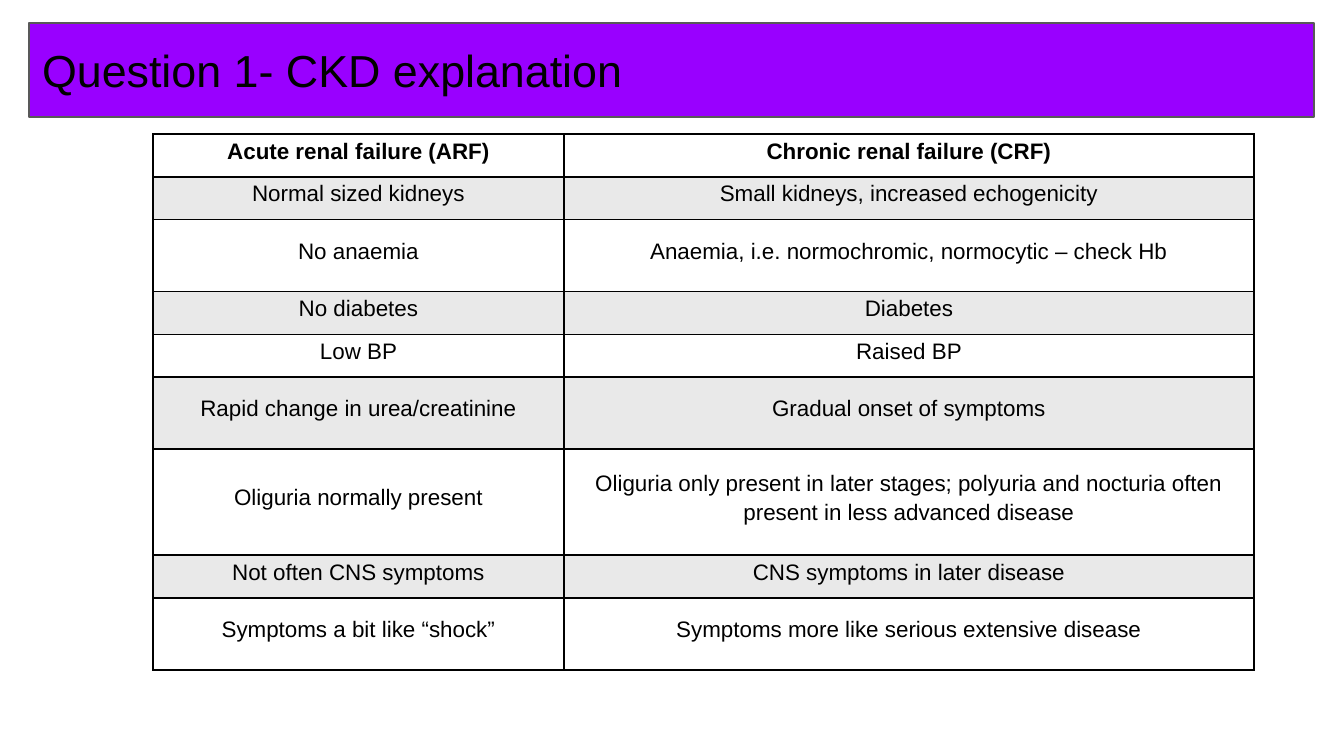
import pptx
import pptx.util
import pptx.dml.color
import pptx.enum.shapes
import pptx.enum.text
import pptx.oxml.ns
import lxml.etree

UNIT = 914400 / 134.4
HUES = {"bar": "9900FF", "edge": "595959", "ink": "000000", "band": "E9E9E9"}
ROWS = [
    (42, "Acute renal failure (ARF)", "Chronic renal failure (CRF)"),
    (42, "Normal sized kidneys", "Small kidneys, increased echogenicity"),
    (72, "No anaemia", "Anaemia, i.e. normochromic, normocytic – check Hb"),
    (42, "No diabetes", "Diabetes"),
    (42, "Low BP", "Raised BP"),
    (72, "Rapid change in urea/creatinine", "Gradual onset of symptoms"),
    (106, "Oliguria normally present",
     "Oliguria only present in later stages; polyuria and nocturia often present in less advanced disease"),
    (42, "Not often CNS symptoms", "CNS symptoms in later disease"),
    (72, "Symptoms a bit like “shock”", "Symptoms more like serious extensive disease"),
]
COLS = [411, 690]
ALIGN = pptx.enum.text.PP_ALIGN
MIDDLE = pptx.enum.text.MSO_ANCHOR.MIDDLE


def px(n):
    return pptx.util.Emu(round(n * UNIT))


def write(frame, text, size=12, bold=False, align=ALIGN.CENTER, space=1.15):
    para = frame.paragraphs[0]
    para.alignment = align
    para.line_spacing = space
    run = para.add_run()
    run.text = text
    run.font.name = "Arial"
    run.font.size = pptx.util.Pt(size)
    run.font.bold = bold
    run.font.color.rgb = pptx.dml.color.RGBColor.from_string(HUES["ink"])


deck = pptx.Presentation()
deck.slide_width, deck.slide_height = px(1344), px(756)
slide = deck.slides.add_slide(deck.slide_layouts[6])

bar = slide.shapes.add_shape(
    pptx.enum.shapes.MSO_SHAPE.RECTANGLE, px(29), px(23), px(1285), px(94))
bar.shadow.inherit = False
bar.fill.solid()
bar.fill.fore_color.rgb = pptx.dml.color.RGBColor.from_string(HUES["bar"])
bar.line.color.rgb = pptx.dml.color.RGBColor.from_string(HUES["edge"])
bar.line.width = pptx.util.Pt(0.75)
frame = bar.text_frame
frame.word_wrap = True
frame.vertical_anchor = MIDDLE
frame.margin_left = frame.margin_right = px(13)
frame.margin_top = frame.margin_bottom = px(13)
write(frame, "Question 1- CKD explanation", size=24, align=ALIGN.LEFT, space=1.0)

table = slide.shapes.add_table(
    len(ROWS), len(COLS), px(153), px(134),
    px(sum(COLS)), px(sum(row[0] for row in ROWS))).table
table.first_row = False
table.horz_banding = False
for col, width in zip(table.columns, COLS):
    col.width = px(width)

for i, (height, *texts) in enumerate(ROWS):
    table.rows[i].height = px(height)
    for j, text in enumerate(texts):
        cell = table.cell(i, j)
        cell.vertical_anchor = MIDDLE
        cell.margin_left = cell.margin_right = px(9)
        cell.margin_top, cell.margin_bottom = px(1), px(13)
        write(cell.text_frame, text, bold=i == 0)
        props = cell._tc.get_or_add_tcPr()
        for side in ("lnL", "lnR", "lnT", "lnB"):
            line = lxml.etree.SubElement(
                props, pptx.oxml.ns.qn("a:" + side), w=str(pptx.util.Pt(1)))
            fill = lxml.etree.SubElement(line, pptx.oxml.ns.qn("a:solidFill"))
            lxml.etree.SubElement(fill, pptx.oxml.ns.qn("a:srgbClr"), val=HUES["ink"])
        if i % 2:
            cell.fill.solid()
            cell.fill.fore_color.rgb = pptx.dml.color.RGBColor.from_string(HUES["band"])
        else:
            cell.fill.background()

deck.save("out.pptx")
